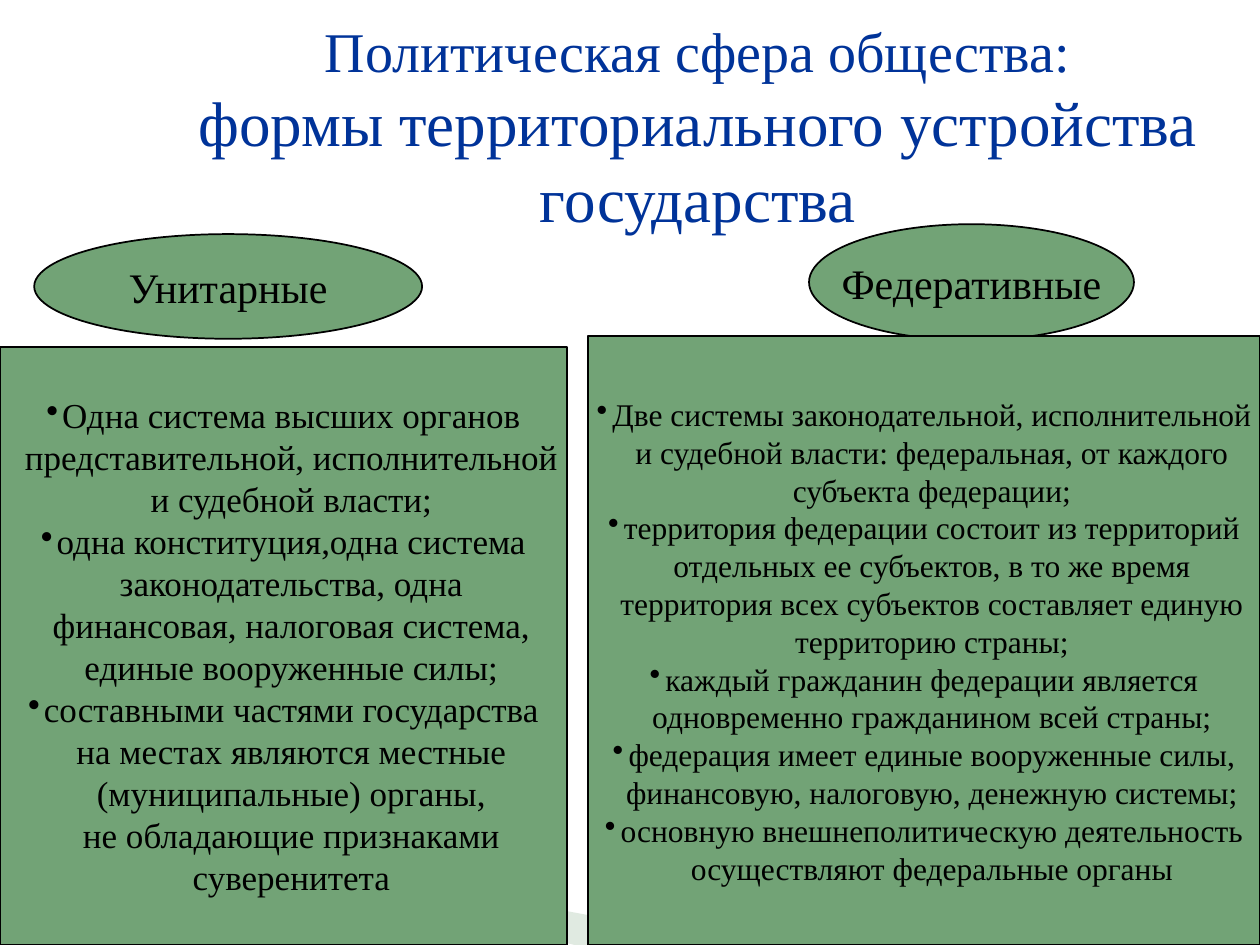
from lxml import etree
from pptx import Presentation
from pptx import util as u
from pptx.dml.color import RGBColor
from pptx.enum import shapes, text
from pptx.oxml.ns import qn

COLORS = {"heading": "003399", "ink": "000000", "panel": "72A376", "wave": "B3CBB5"}
FONT = "Times New Roman"
HANG = u.Pt(9)

HEADING = ["Политическая сфера общества:", "формы территориального устройства государства"]
HEADING_AREA = (2.74, 0, 22.66, 5.08)
WAVE = [(1.4, 16.51), (15.11, 19.05), (11.58, 19.05)]

FORMS = [
    {
        "name": "Унитарные",
        "oval": (0.69, 4.72, 7.82, 2.11),
        "panel": (0, 6.99, 11.43, 12.06),
        "size": 20,
        "features": [
            ["Одна система высших органов", "представительной, исполнительной",
             "и судебной власти;"],
            ["одна конституция,одна система", "законодательства, одна",
             "финансовая, налоговая система,", "единые вооруженные силы;"],
            ["составными частями государства", "на местах являются местные",
             "(муниципальные) органы,", "не обладающие признаками", "суверенитета"],
        ],
    },
    {
        "name": "Федеративные",
        "oval": (16.31, 4.52, 6.55, 2.34),
        "panel": (11.86, 6.78, 13.54, 12.27),
        "size": 18,
        "features": [
            ["Две системы законодательной, исполнительной",
             "и судебной власти: федеральная, от каждого", "субъекта федерации;"],
            ["территория федерации состоит из территорий",
             "отдельных ее субъектов, в то же время",
             "территория всех субъектов составляет единую", "территорию страны;"],
            ["каждый гражданин федерации является",
             "одновременно гражданином всей страны;"],
            ["федерация имеет единые вооруженные силы,",
             "финансовую, налоговую, денежную системы;"],
            ["основную внешнеполитическую деятельность",
             "осуществляют федеральные органы"],
        ],
    },
]


def rgb(name):
    return RGBColor.from_string(COLORS[name])


def cm(values):
    return [u.Cm(value) for value in values]


def add_bullet(paragraph):
    props = paragraph._p.get_or_add_pPr()
    props.set("marL", str(HANG))
    props.set("indent", str(-HANG))
    tint = etree.SubElement(props, qn("a:buClr"))
    etree.SubElement(tint, qn("a:srgbClr"), val=COLORS["ink"])
    etree.SubElement(props, qn("a:buChar"), char="•")


def write(holder, paragraphs, sizes, color="ink", wrap=True, bullets=False, inset=0.25):
    frame = holder.text_frame
    frame.word_wrap = wrap
    frame.vertical_anchor = text.MSO_ANCHOR.MIDDLE
    frame.margin_left = frame.margin_right = u.Cm(inset)
    for index, lines in enumerate(paragraphs):
        paragraph = frame.add_paragraph() if index else frame.paragraphs[0]
        paragraph.alignment = text.PP_ALIGN.CENTER
        if bullets:
            add_bullet(paragraph)
        for number, line in enumerate(lines):
            if number:
                paragraph.add_line_break()
            run = paragraph.add_run()
            run.text = line
            run.font.name = FONT
            run.font.size = u.Pt(sizes[number % len(sizes)])
            run.font.color.rgb = rgb(color)


def add_block(slide, kind, area):
    block = slide.shapes.add_shape(kind, *cm(area))
    block.shadow.inherit = False
    block.fill.solid()
    block.fill.fore_color.rgb = rgb("panel")
    block.line.color.rgb = rgb("ink")
    block.line.width = u.Pt(1)
    return block


def add_wave(slide):
    start, *rest = [cm(point) for point in WAVE]
    builder = slide.shapes.build_freeform(*start)
    builder.add_line_segments(rest, close=True)
    wave = builder.convert_to_shape()
    wave.shadow.inherit = False
    wave.fill.solid()
    wave.fill.fore_color.rgb = rgb("wave")
    wave.line.fill.background()
    tint = wave._element.spPr.find(qn("a:solidFill"))[0]
    etree.SubElement(tint, qn("a:alpha"), val="40000")


def main():
    deck = Presentation()
    deck.slide_width, deck.slide_height = u.Cm(25.4), u.Cm(19.05)
    slide = deck.slides.add_slide(deck.slide_layouts[6])
    add_wave(slide)
    heading = slide.shapes.add_textbox(*cm(HEADING_AREA))
    write(heading, [HEADING], [32, 36], color="heading")
    for form in FORMS:
        oval = add_block(slide, shapes.MSO_SHAPE.OVAL, form["oval"])
        write(oval, [[form["name"]]], [24], wrap=False)
        panel = add_block(slide, shapes.MSO_SHAPE.RECTANGLE, form["panel"])
        write(panel, form["features"], [form["size"]], bullets=True, inset=0)
    deck.save("out.pptx")


if __name__ == "__main__":
    main()
